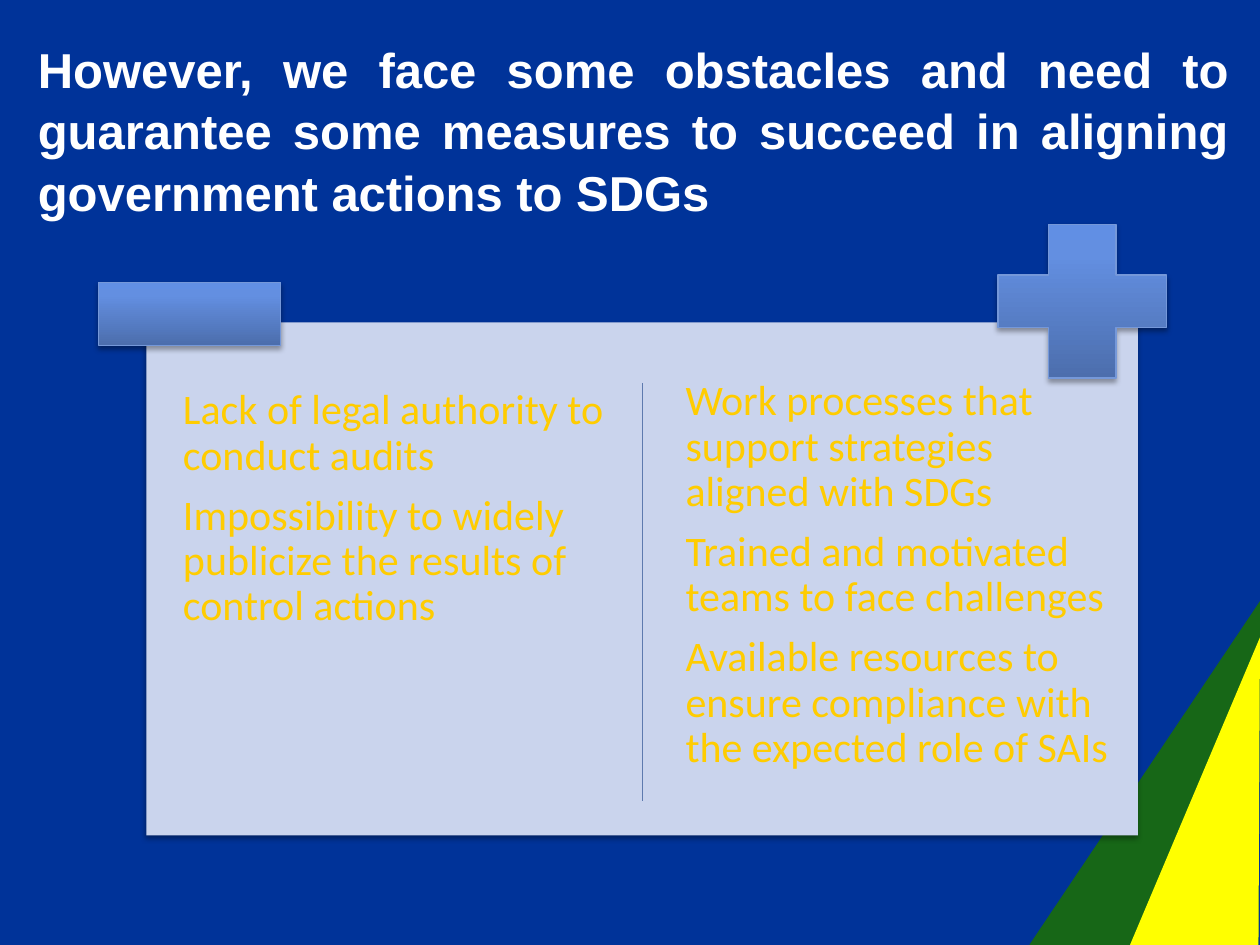
from lxml.etree import SubElement
from pptx import Presentation
from pptx.dml.color import RGBColor
from pptx.enum.shapes import MSO_CONNECTOR, MSO_SHAPE
from pptx.enum.text import MSO_ANCHOR, PP_ALIGN
from pptx.oxml import parse_xml
from pptx.oxml.ns import nsdecls, qn
from pptx.util import Cm, Pt

NAVY = RGBColor(0x00, 0x33, 0x99)
GREEN = RGBColor(0x17, 0x67, 0x17)
YELLOW = RGBColor(0xFF, 0xFF, 0x00)
PALE = RGBColor(0xCA, 0xD4, 0xED)
GOLD = RGBColor(0xFF, 0xCC, 0x00)
WHITE = RGBColor(0xFF, 0xFF, 0xFF)
EDGE = RGBColor(0x75, 0x98, 0xD9)
RULE = RGBColor(0x5E, 0x7A, 0xAE)
BLEND = [
    (0, RGBColor(0x4C, 0x6E, 0xAD)),
    (80, RGBColor(0x63, 0x8F, 0xE1)),
    (100, RGBColor(0x61, 0x8F, 0xE4)),
]

RISKS = [
    "Lack of legal authority to conduct audits",
    "Impossibility to widely publicize the results of control actions",
]
NEEDS = [
    "Work processes that support strategies aligned with SDGs",
    "Trained and motivated teams to face challenges",
    "Available resources to ensure compliance with the expected role of SAIs",
]
TITLE = (
    "However, we face some obstacles and need to guarantee some measures "
    "to succeed in aligning government actions to SDGs"
)


class Deck:
    """Holds the style and the current slide, and draws each kind of element."""

    def __init__(self):
        self.prs = Presentation()
        self.prs.slide_width, self.prs.slide_height = Cm(25.4), Cm(19.05)
        self.slide = self.prs.slides.add_slide(self.prs.slide_layouts[5])
        self.shapes = self.slide.shapes
        fill = self.slide.background.fill
        fill.solid()
        fill.fore_color.rgb = NAVY

    def words(self, para, text, font, size, color, bold=False):
        run = para.add_run()
        run.text = text
        run.font.name, run.font.size, run.font.bold = font, Pt(size), bold
        run.font.color.rgb = color

    def title(self, text, *box):
        shape = self.shapes.title
        shape.left, shape.top, shape.width, shape.height = map(Cm, box)
        shape.text_frame.word_wrap = True
        shape.text_frame.vertical_anchor = MSO_ANCHOR.MIDDLE
        para = shape.text_frame.paragraphs[0]
        para.alignment, para.line_spacing = PP_ALIGN.JUSTIFY, 1.05
        self.words(para, text, "Arial", 28, WHITE, True)

    def wedge(self, color, left, top):
        bottom = 19.05
        form = self.shapes.build_freeform(Cm(left), Cm(bottom))
        form.add_line_segments([(Cm(25.4), Cm(top)), (Cm(25.37), Cm(bottom))])
        shape = form.convert_to_shape()
        shape.shadow.inherit = False
        shape.fill.solid()
        shape.fill.fore_color.rgb = color
        shape.line.fill.background()

    def block(self, kind, *box):
        shape = self.shapes.add_shape(kind, *map(Cm, box))
        shape.shadow.inherit = False
        effect = shape._element.spPr.find(qn("a:effectLst"))
        effect.append(parse_xml(
            f'<a:outerShdw {nsdecls("a")} blurRad="{Pt(3.1)}" dist="{Pt(1.8)}" '
            'dir="5400000" rotWithShape="0"><a:srgbClr val="000000">'
            '<a:alpha val="35000"/></a:srgbClr></a:outerShdw>'))
        return shape

    def panel(self, *box):
        shape = self.block(MSO_SHAPE.RECTANGLE, *box)
        shape.fill.solid()
        shape.fill.fore_color.rgb = PALE
        shape.line.fill.background()

    def sign(self, kind, *box):
        shape = self.block(kind, *box)
        shape.line.color.rgb, shape.line.width = EDGE, Pt(0.75)
        stops = "".join(
            f'<a:gs pos="{pos * 1000}"><a:srgbClr val="{color}"/></a:gs>'
            for pos, color in BLEND)
        shape._element.spPr.find(qn("a:prstGeom")).addnext(parse_xml(
            f'<a:gradFill {nsdecls("a")} rotWithShape="1"><a:gsLst>{stops}'
            '</a:gsLst><a:lin ang="16200000" scaled="0"/></a:gradFill>'))
        return shape

    def column(self, items, *box):
        frame = self.shapes.add_textbox(*map(Cm, box)).text_frame
        frame.word_wrap = True
        frame.margin_left = frame.margin_right = Cm(0.13)
        frame.margin_top = frame.margin_bottom = Cm(0.13)
        for num, item in enumerate(items):
            para = frame.add_paragraph() if num else frame.paragraphs[0]
            para.line_spacing, para.space_after = 0.9, Pt(8.4)
            self.words(para, item, "Calibri", 24, GOLD)

    def rule(self, left, top, bottom):
        line = self.shapes.add_connector(
            MSO_CONNECTOR.STRAIGHT, Cm(left), Cm(top), Cm(left), Cm(bottom))
        line.line.color.rgb, line.line.width = RULE, Pt(0.75)
        SubElement(line._element.spPr, qn("a:effectLst"))


def main():
    deck = Deck()
    deck.title(TITLE, 0.51, 0.74, 24.51, 3.71)
    deck.wedge(GREEN, 20.75, 12.12)
    deck.wedge(YELLOW, 22.78, 12.85)
    deck.panel(2.95, 6.5, 19.99, 10.34)
    deck.column(RISKS, 3.56, 7.7, 9.3, 8.84)
    deck.column(NEEDS, 13.69, 7.52, 9.12, 8.84)
    plus = deck.sign(MSO_SHAPE.CROSS, 20.12, 4.52, 3.4, 3.1)
    plus.adjustments[0] = 0.33
    deck.sign(MSO_SHAPE.RECTANGLE, 1.98, 5.69, 3.68, 1.27)
    deck.rule(12.95, 7.72, 16.15)
    deck.prs.save("out.pptx")


if __name__ == "__main__":
    main()
